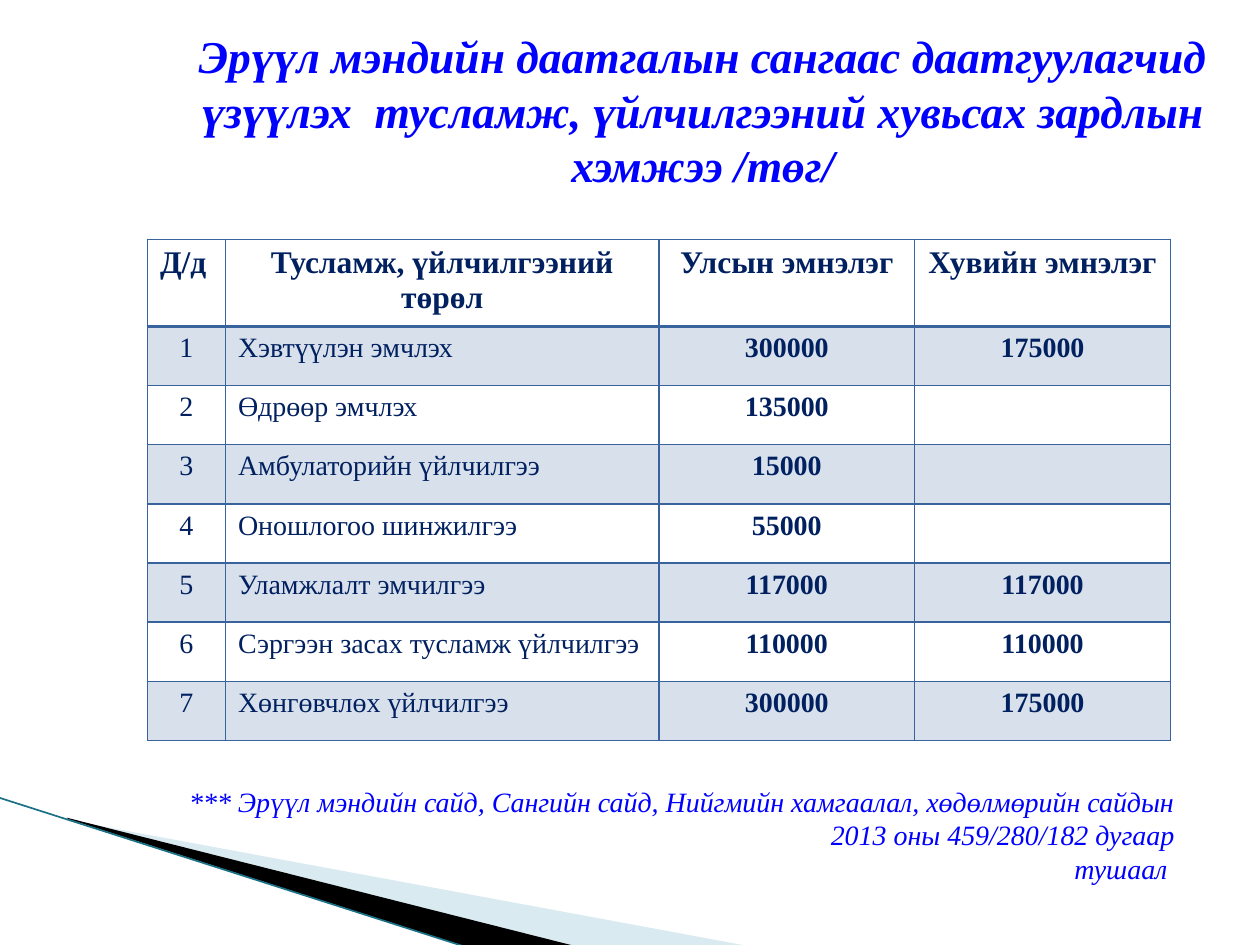
"""Build the slide on variable costs of care paid by the health insurance fund."""
from dataclasses import dataclass
from typing import Optional

from lxml import etree
from pptx import Presentation
from pptx import util as u
from pptx.dml import color
from pptx.enum import shapes, text
from pptx.oxml import ns

FONT = "Times New Roman"
COLORS = {"blue": "0000FF", "navy": "002060", "grid": "39639D", "band": "D7E0EB",
          "wedge": "A0CBDC", "black": "000000", "edge": "1A7085"}
WIDTH, HEIGHT = 10, 7.5
COLUMNS = (0.62, 3.44, 2.03, 2.03)
HEADER_HEIGHT, ROW_HEIGHT = 0.69, 0.47
HEADERS = ("Д/д", "Тусламж, үйлчилгээний төрөл", "Улсын эмнэлэг", "Хувийн эмнэлэг")
TITLE = ("Эрүүл мэндийн даатгалын сангаас даатгуулагчид үзүүлэх  тусламж, "
         "үйлчилгээний хувьсах зардлын хэмжээ /төг/")
NOTE = ("*** Эрүүл мэндийн сайд, Сангийн сайд, Нийгмийн хамгаалал, хөдөлмөрийн "
        "сайдын 2013 оны 459/280/182 дугаар\nтушаал ")
ALIGN = text.PP_ALIGN


@dataclass(frozen=True)
class Service:
    name: str
    public: int
    private: Optional[int] = None


@dataclass(frozen=True)
class Style:
    size: float
    color: str
    bold: bool = False
    italic: bool = False
    align: ALIGN = ALIGN.CENTER


@dataclass(frozen=True)
class Wedge:
    points: tuple
    color: str
    opacity: int = 100


SERVICES = (
    Service("Хэвтүүлэн эмчлэх", 300000, 175000),
    Service("Өдрөөр эмчлэх", 135000),
    Service("Амбулаторийн үйлчилгээ", 15000),
    Service("Оношлогоо шинжилгээ", 55000),
    Service("Уламжлалт эмчилгээ", 117000, 117000),
    Service("Сэргээн засах тусламж үйлчилгээ", 110000, 110000),
    Service("Хөнгөвчлөх үйлчилгээ", 300000, 175000),
)
WEDGES = (
    Wedge(((0.55, 6.51), (5.95, 7.51), (4.56, 7.51), (0.55, 6.5)), "wedge", 40),
    Wedge(((0.53, 6.49), (4.57, 7.51), (3.72, 7.52), (0.54, 6.5)), "black"),
)
BODY_STYLES = (
    Style(16, "navy"),
    Style(16, "navy", align=ALIGN.LEFT),
    Style(16, "navy", bold=True),
    Style(16, "navy", bold=True),
)


def rgb(name: str) -> color.RGBColor:
    return color.RGBColor.from_string(COLORS[name])


def paint(fill, name: str, opacity: int = 100) -> None:
    """Fill with a solid colour at the given opacity in percent."""
    fill.solid()
    fill.fore_color.rgb = rgb(name)
    if opacity < 100:
        tint = fill._xPr.find(".//" + ns.qn("a:srgbClr"))
        etree.SubElement(tint, ns.qn("a:alpha"), val=str(opacity * 1000))


def write(frame, words: str, style: Style) -> None:
    """Set the text of a frame and format its runs."""
    frame.text = words
    for para in frame.paragraphs:
        para.alignment = style.align
        for span in para.runs:
            font = span.font
            font.name, font.size = FONT, u.Pt(style.size)
            font.bold, font.italic = style.bold, style.italic
            font.color.rgb = rgb(style.color)


def place(box, left: float, top: float, width: float, height: float) -> None:
    """Position a text shape and centre its wrapped text vertically."""
    box.left, box.top = u.Inches(left), u.Inches(top)
    box.width, box.height = u.Inches(width), u.Inches(height)
    frame = box.text_frame
    frame.word_wrap = True
    frame.auto_size = text.MSO_AUTO_SIZE.NONE
    frame.vertical_anchor = text.MSO_ANCHOR.MIDDLE


def draw_wedge(slide, wedge: Wedge) -> None:
    """Draw one filled corner wedge."""
    points = [(u.Inches(x), u.Inches(y)) for x, y in wedge.points]
    builder = slide.shapes.build_freeform(*points[0])
    builder.add_line_segments(points[1:], close=True)
    shape = builder.convert_to_shape()
    shape.shadow.inherit = False
    shape.line.fill.background()
    paint(shape.fill, wedge.color, wedge.opacity)


def draw_edge(slide) -> None:
    """Draw the thin line along the lower side of the wedges."""
    ends = [u.Inches(value) for value in (-0.01, 6.33, 3.71, 7.52)]
    edge = slide.shapes.add_connector(shapes.MSO_CONNECTOR.STRAIGHT, *ends)
    edge.line.color.rgb = rgb("edge")
    edge.line.width = u.Pt(0.95)
    etree.SubElement(edge._element.spPr, ns.qn("a:effectLst"))


def add_borders(cell, top: float, bottom: float) -> None:
    """Outline a cell with the given top and bottom widths in points."""
    props = cell._tc.get_or_add_tcPr()
    for side, width in (("L", 1), ("R", 1), ("T", top), ("B", bottom)):
        line = etree.SubElement(props, ns.qn(f"a:ln{side}"), w=str(u.Pt(width)))
        solid = etree.SubElement(line, ns.qn("a:solidFill"))
        etree.SubElement(solid, ns.qn("a:srgbClr"), val=COLORS["grid"])


def draw_table(slide) -> None:
    """Draw the cost table with shaded odd rows."""
    rows = [HEADERS] + [
        (number, service.name, service.public, service.private)
        for number, service in enumerate(SERVICES, 1)]
    height = HEADER_HEIGHT + ROW_HEIGHT * len(SERVICES)
    table = slide.shapes.add_table(
        len(rows), len(COLUMNS), u.Inches(1.17), u.Inches(1.9),
        u.Inches(sum(COLUMNS)), u.Inches(height)).table
    table.horz_banding = table.first_row = False
    for column, width in zip(table.columns, COLUMNS):
        column.width = u.Inches(width)
    for r, values in enumerate(rows):
        table.rows[r].height = u.Inches(ROW_HEIGHT if r else HEADER_HEIGHT)
        for c, value in enumerate(values):
            cell = table.cell(r, c)
            add_borders(cell, 2 if r == 1 else 1, 1 if r else 2)
            if r % 2:
                paint(cell.fill, "band")
            else:
                cell.fill.background()
            if value is not None:
                header = Style(18, "navy", bold=True,
                               align=ALIGN.CENTER if c else ALIGN.LEFT)
                write(cell.text_frame, str(value), BODY_STYLES[c] if r else header)


def main() -> None:
    deck = Presentation()
    deck.slide_width, deck.slide_height = u.Inches(WIDTH), u.Inches(HEIGHT)
    slide = deck.slides.add_slide(deck.slide_layouts[5])
    for wedge in WEDGES:
        draw_wedge(slide, wedge)
    draw_edge(slide)
    title = slide.shapes.title
    place(title, 1.33, 0.25, 0.85 * WIDTH, HEIGHT / 6)
    write(title.text_frame, TITLE, Style(26, "blue", bold=True, italic=True))
    draw_table(slide)
    note = slide.shapes.add_textbox(0, 0, 0, 0)
    place(note, 0.92, 6, 0.85 * WIDTH, HEIGHT / 6)
    write(note.text_frame, NOTE, Style(16, "blue", italic=True, align=ALIGN.RIGHT))
    deck.save("out.pptx")


if __name__ == "__main__":
    main()
